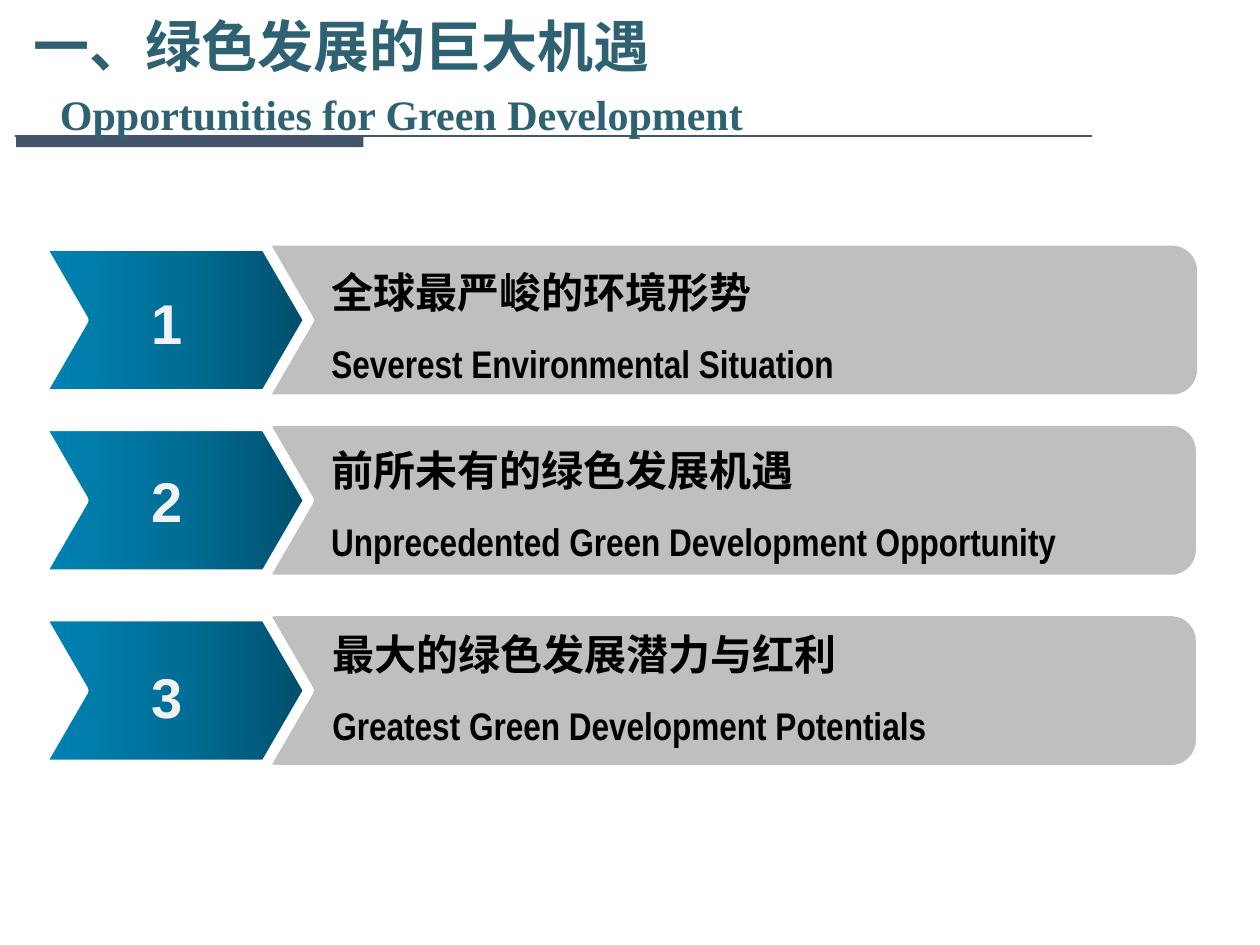
import copy

import pptx
import pptx.dml.color
import pptx.enum.shapes
import pptx.enum.text
import pptx.oxml.ns
import pptx.util
from lxml import etree

Pt = pptx.util.Pt
RGBColor = pptx.dml.color.RGBColor
SHAPE = pptx.enum.shapes.MSO_SHAPE
ANCHOR = pptx.enum.text.MSO_ANCHOR
qn = pptx.oxml.ns.qn

SLATE = RGBColor(0x44, 0x54, 0x6A)
TEAL = RGBColor(0x2E, 0x62, 0x72)
GREY = RGBColor(0xBF, 0xBF, 0xBF)
PALE = RGBColor(0xF2, 0xF2, 0xF2)
WHITE = RGBColor(0xFF, 0xFF, 0xFF)
BLACK = RGBColor(0, 0, 0)
BLUES = [(0, RGBColor(0x00, 0x4E, 0x6B)),
         (0.5, RGBColor(0x00, 0x6F, 0x98)),
         (1, RGBColor(0x00, 0x84, 0xB4))]

TITLE = "一、绿色发展的巨大机遇"
SUBTITLE = "Opportunities for Green Development"
# Chinese, English, band (left, top, width), number top, label (left, top, width)
ITEMS = [
    ("全球最严峻的环境形势", "Severest Environmental Situation",
     (142.6, 140.4, 541.4), 161.3, (182.2, 149, 438.5)),
    ("前所未有的绿色发展机遇", "Unprecedented Green Development Opportunity",
     (144.7, 243.4, 538.6), 262.8, (182.2, 250.6, 473)),
    ("最大的绿色发展潜力与红利", "Greatest Green Development Potentials",
     (144.7, 352.1, 538.6), 375.1, (182.9, 355.7, 508.3)),
]
ROW_HEIGHT = 85
CHEVRON_LEFT, CHEVRON_WIDTH = 23, 153.4

prs = pptx.Presentation()
prs.slide_width, prs.slide_height = Pt(720), Pt(540)
slide = prs.slides.add_slide(prs.slide_layouts[6])


def add_block(kind, left, top, width, height):
    block = slide.shapes.add_shape(kind, Pt(left), Pt(top), Pt(width), Pt(height))
    block.shadow.inherit = False
    block.line.fill.background()
    return block


def add_filled(kind, color, *box):
    block = add_block(kind, *box)
    block.fill.solid()
    block.fill.fore_color.rgb = color
    return block


def add_frame(left, top, width, height, wrap=True):
    frame = slide.shapes.add_textbox(Pt(left), Pt(top), Pt(width), Pt(height)).text_frame
    frame.word_wrap = wrap
    return frame


def add_text(paragraph, text, size, font, color, spacing=1.0):
    paragraph.line_spacing = spacing
    run = paragraph.add_run()
    run.text = text
    run.font.size = Pt(size)
    run.font.name = font
    run.font.bold = True
    run.font.color.rgb = color


def fill_gradient(block):
    block.fill.gradient()
    block.fill.gradient_angle = 180
    stops = block.fill.gradient_stops
    stop_list = block.element.spPr.find(".//" + qn("a:gsLst"))
    stop_list.append(copy.deepcopy(stop_list[-1]))
    stops = block.fill.gradient_stops
    for stop, (position, color) in zip(stops, BLUES):
        stop.position = position
        stop.color.rgb = color


# Header rule
rule = slide.shapes.add_connector(pptx.enum.shapes.MSO_CONNECTOR.STRAIGHT,
                                  Pt(8.6), Pt(77.8), Pt(624.2), Pt(77.8))
rule.line.color.rgb = SLATE
rule.line.width = Pt(1.5)
etree.SubElement(rule.element.spPr, qn("a:effectLst"))
add_filled(SHAPE.RECTANGLE, SLATE, 9.2, 78.3, 198.5, 5.8)

# Title
title = add_frame(12.2, 6.5, 707.8, 77.8)
title.vertical_anchor = ANCHOR.MIDDLE
add_text(title.paragraphs[0], TITLE, 32, "Arial Narrow", TEAL, 0.9)
subtitle = title.add_paragraph()
subtitle.space_before = Pt(8)
subtitle_props = subtitle._p.get_or_add_pPr()
subtitle_props.set("marL", str(Pt(15)))
subtitle_props.set("indent", "0")
add_text(subtitle, SUBTITLE, 24, "Times New Roman", TEAL, 0.9)

# Numbered rows
for number, (chinese, english, band, number_top, label) in enumerate(ITEMS, 1):
    band_left, band_top, band_width = band
    add_filled(SHAPE.ROUNDED_RECTANGLE, GREY, band_left, band_top, band_width, ROW_HEIGHT)

    chevron = add_block(SHAPE.CHEVRON, CHEVRON_LEFT, band_top, CHEVRON_WIDTH, ROW_HEIGHT)
    chevron.adjustments[0] = 0.29
    fill_gradient(chevron)
    chevron.line.color.rgb = WHITE
    chevron.line.width = Pt(6)

    digit = add_frame(79.2, number_top, 32.4, 46, wrap=False)
    add_text(digit.paragraphs[0], str(number), 32, "Arial", PALE)

    label_left, label_top, label_width = label
    caption = add_frame(label_left, label_top, label_width, 76.3)
    add_text(caption.paragraphs[0], chinese, 24, "Arial", BLACK)
    add_text(caption.add_paragraph(), english, 22, "Arial Narrow", BLACK, 1.5)

prs.save("out.pptx")
